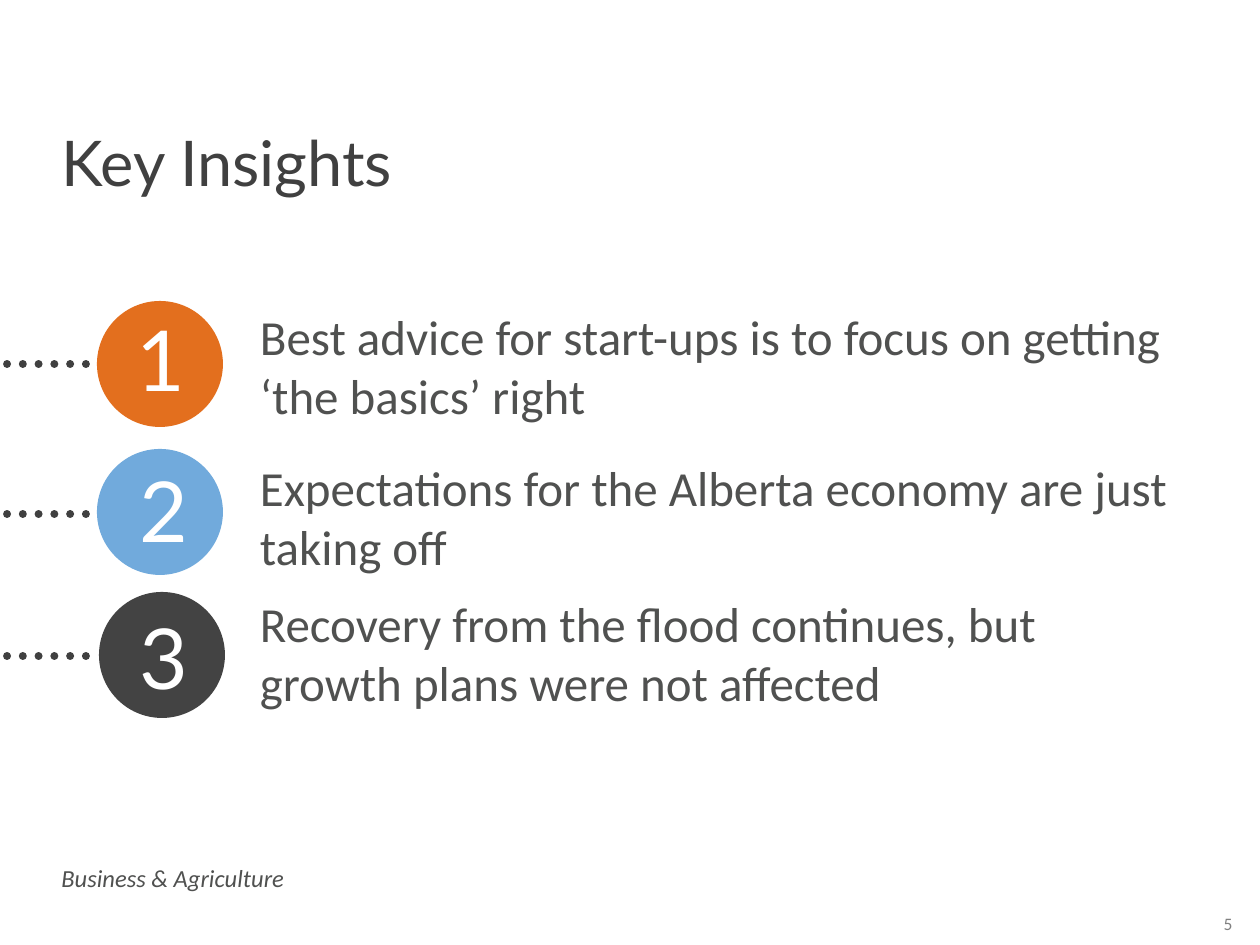
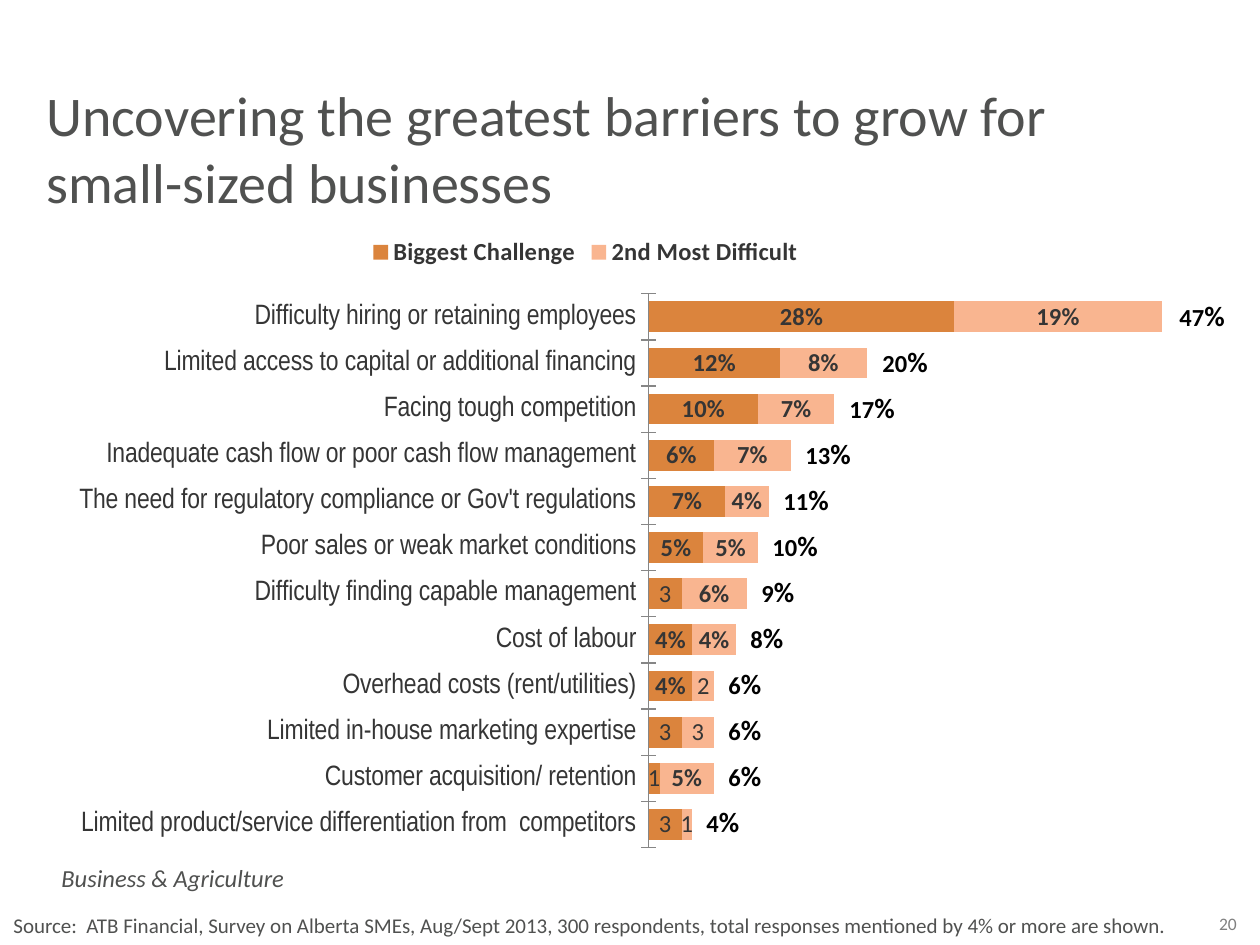
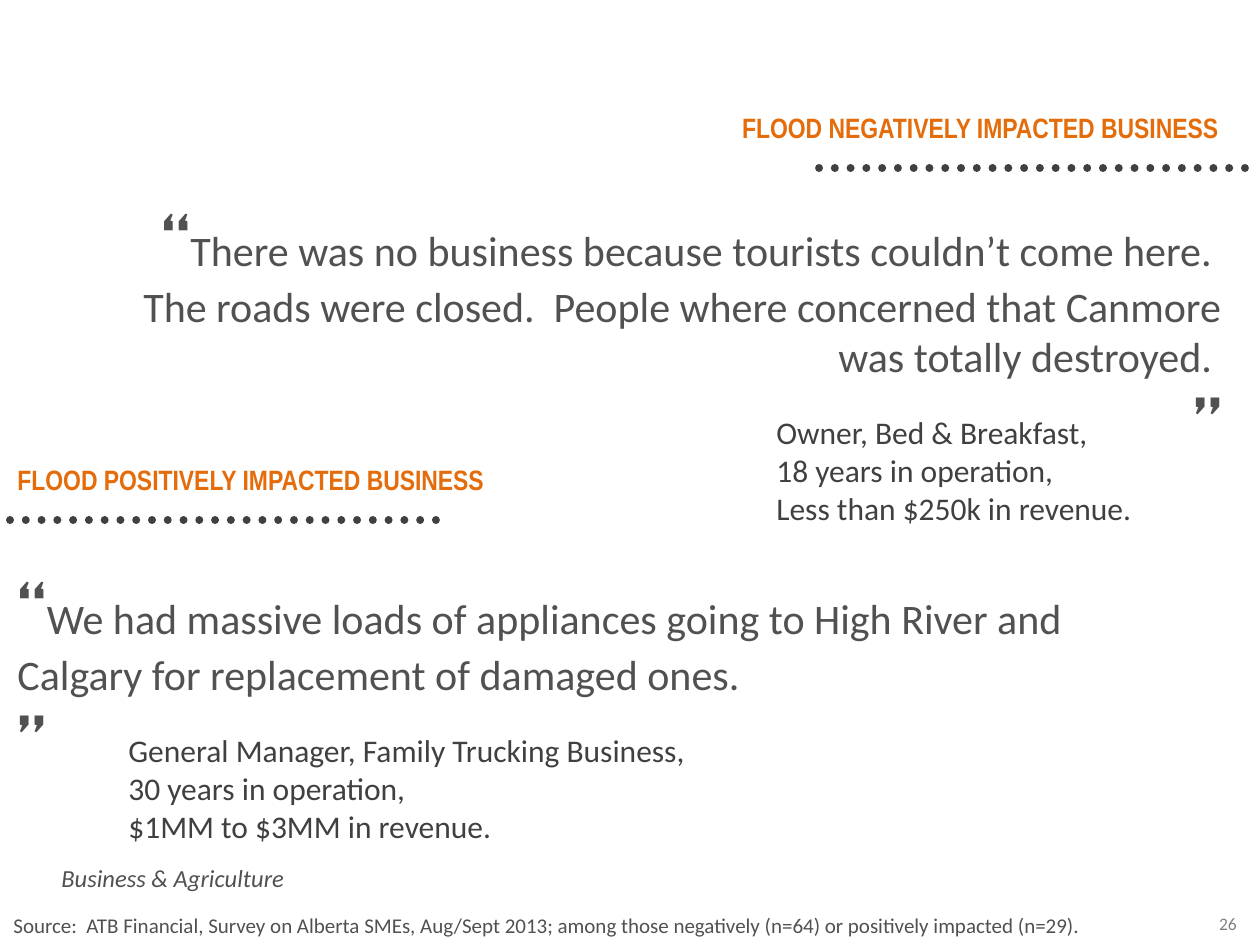
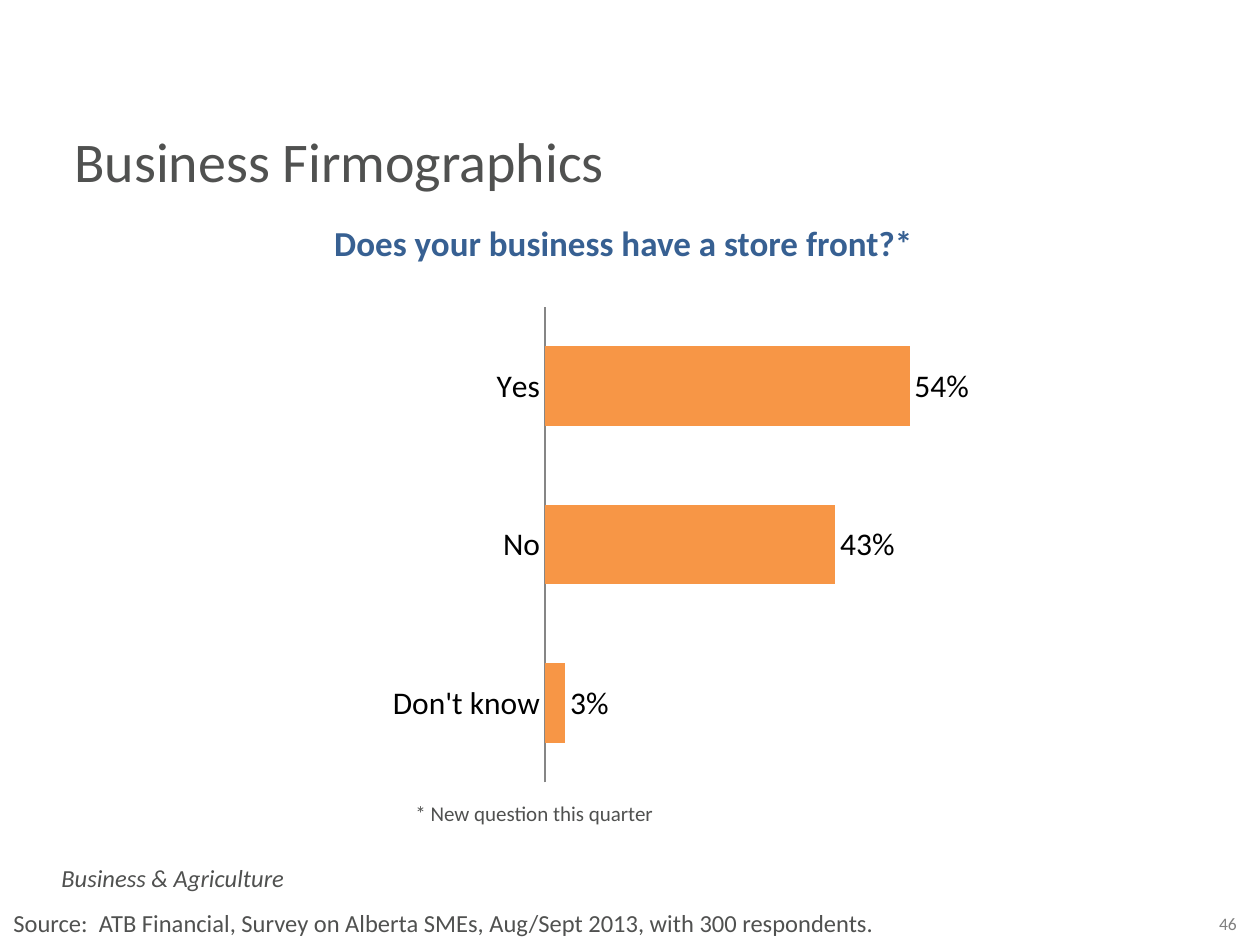
from lxml import etree
from pptx import Presentation
from pptx.chart.data import CategoryChartData
from pptx.dml.color import RGBColor
from pptx.enum.chart import XL_CHART_TYPE as ChartType
from pptx.enum.chart import XL_LABEL_POSITION as LabelPosition
from pptx.enum.chart import XL_LEGEND_POSITION as LegendPosition
from pptx.enum.chart import XL_TICK_MARK as TickMark
from pptx.enum.dml import MSO_LINE_DASH_STYLE as Dash
from pptx.enum.shapes import MSO_CONNECTOR as Connector
from pptx.enum.shapes import MSO_SHAPE as Shape
from pptx.enum.text import MSO_ANCHOR as Anchor
from pptx.enum.text import PP_ALIGN as Align
from pptx.oxml.ns import qn
from pptx.util import Emu, Pt

PX_PER_INCH = 126
BODY, NUMERAL, NARROW, QUOTE = "Calibri", "Lato", "Arial Narrow", "Cabin"
COLORS = {
    "body": "505150", "dark": "404040", "number": "808080", "black": "000000",
    "white": "FFFFFF", "heading": "E46C0A", "question": "376092",
    "orange": "E36F1E", "blue": "71AADC", "charcoal": "434343",
    "chart_text": "353535", "axis": "868686",
    "biggest": "DB843D", "second": "F9B590", "storefront": "F79646",
}

INSIGHTS = [
    # colour, circle (left, top), numeral (left, top), dots top, text top, text
    ("orange", (97, 301), (93, 301), 364, 323,
     "Best advice for start-ups is to focus on getting ‘the basics’ right"),
    ("blue", (97, 449), (96, 452), 514, 474,
     "Expectations for the Alberta economy are just taking off"),
    ("charcoal", (99, 592), (96, 599), 656, 610,
     "Recovery from the flood continues, but growth plans were not affected"),
]

BARRIERS = [
    ("Difficulty hiring or retaining employees", 0.28, 0.19),
    ("Limited access to capital or additional financing", 0.12, 0.08),
    ("Facing tough competition", 0.10, 0.07),
    ("Inadequate cash flow or poor cash flow management", 0.06, 0.07),
    ("The need for regulatory compliance or Gov't regulations", 0.07, 0.04),
    ("Poor sales or weak market conditions", 0.05, 0.05),
    ("Difficulty finding capable management", 0.03, 0.06),
    ("Cost of labour", 0.04, 0.04),
    ("Overhead costs (rent/utilities)", 0.04, 0.02),
    ("Limited in-house marketing expertise", 0.03, 0.03),
    ("Customer acquisition/ retention", 0.01, 0.05),
    ("Limited product/service differentiation from  competitors", 0.03, 0.01),
]
SHORT_LABEL_LIMIT = 0.035


def px(value):
    return Emu(round(value * 914400 / PX_PER_INCH))


def color(name):
    return RGBColor.from_string(COLORS[name])


def style_font(font, size, name=BODY, ink="body", bold=False, italic=False):
    font.size, font.name = Pt(size), name
    font.bold, font.italic = bold, italic
    font.color.rgb = color(ink)


def write_text(frame, paragraphs, align=Align.LEFT, anchor=Anchor.TOP,
               margins=None, line_spacing=None, **style):
    """Fill a frame; a paragraph is a string or a list of (text, style) runs."""
    frame.word_wrap = True
    frame.vertical_anchor = anchor
    if margins:
        (frame.margin_left, frame.margin_top,
         frame.margin_right, frame.margin_bottom) = map(px, margins)
    if isinstance(paragraphs, str):
        paragraphs = [paragraphs]
    for index, runs in enumerate(paragraphs):
        paragraph = frame.add_paragraph() if index else frame.paragraphs[0]
        paragraph.alignment = align
        if line_spacing:
            paragraph.line_spacing = line_spacing
        for text, changes in [(runs, {})] if isinstance(runs, str) else runs:
            run = paragraph.add_run()
            run.text = text
            style_font(run.font, **{**style, **changes})


def add_text(slide, box, paragraphs, **options):
    shape = slide.shapes.add_textbox(*map(px, box))
    write_text(shape.text_frame, paragraphs, **options)


def add_shape(slide, kind, box, fill=None):
    shape = slide.shapes.add_shape(kind, *map(px, box))
    shape.shadow.inherit = False
    shape.line.fill.background()
    if fill:
        shape.fill.solid()
        shape.fill.fore_color.rgb = color(fill)
    else:
        shape.fill.background()
    return shape


def add_dots(slide, left, top, width):
    connector = slide.shapes.add_connector(
        Connector.STRAIGHT, px(left), px(top), px(left + width), px(top))
    connector.line.color.rgb = color("dark")
    connector.line.width = Pt(4.5)
    connector.line.dash_style = Dash.ROUND_DOT
    properties = connector._element.spPr
    properties.find(qn("a:ln")).set("cap", "rnd")
    etree.SubElement(properties, qn("a:effectLst"))


def new_slide(presentation, number):
    """Add a blank slide with the footer all slides share."""
    slide = presentation.slides.add_slide(presentation.slide_layouts[6])
    add_text(slide, (1197, 907, 62, 34), str(number), size=10, ink="number",
             align=Align.CENTER)
    add_text(slide, (49, 857, 354, 43), "Business & Agriculture", size=14,
             italic=True)
    return slide


def add_title(slide, box, text, **options):
    add_text(slide, box, text, **{"size": 32, **options})


def add_source(slide, text, top=906, size=12):
    add_text(slide, (1, top, 1218, 38), "Source:  ATB Financial, Survey on "
             "Alberta SMEs, Aug/Sept 2013" + text, size=size)


def add_bar_chart(slide, box, kind, categories, series, plot_box, gap, maximum,
                  size, ink, bold=False):
    """Add a bar chart; series are (name, values, colour)."""
    data = CategoryChartData(number_format="0%")
    data.categories = categories
    for name, values, _ in series:
        data.add_series(name, values)
    chart = slide.shapes.add_chart(kind, *map(px, box), data).chart
    chart.has_title = chart.has_legend = False
    style_font(chart.font, size, ink=ink, bold=bold)

    chart.value_axis.minimum_scale = 0
    chart.value_axis.maximum_scale = maximum
    chart.value_axis.has_major_gridlines = False
    chart.value_axis.visible = False
    axis = chart.category_axis
    axis.has_major_gridlines = False
    axis.major_tick_mark = axis.minor_tick_mark = TickMark.NONE
    axis.format.line.color.rgb = color("axis")

    plot = chart.plots[0]
    plot.gap_width = gap
    plot.vary_by_categories = False
    for item, (_, _, fill) in zip(plot.series, series):
        item.format.fill.solid()
        item.format.fill.fore_color.rgb = color(fill)
        item.invert_if_negative = False
        labels = item.data_labels
        labels.show_value = True
        labels.number_format, labels.number_format_is_linked = "0%", False
        style_font(labels.font, size, ink=ink, bold=bold)
    place_plot(chart, plot_box)
    return chart


def place_plot(chart, plot_box):
    """Fix the inner plot area, given as fractions of the chart."""
    area = chart._chartSpace.chart.plotArea
    for old in area.findall(qn("c:layout")):
        area.remove(old)
    layout = etree.Element(qn("c:layout"))
    manual = etree.SubElement(layout, qn("c:manualLayout"))
    settings = [("layoutTarget", "inner"), ("xMode", "edge"), ("yMode", "edge"),
                *zip("xywh", plot_box)]
    for tag, value in settings:
        etree.SubElement(manual, qn(f"c:{tag}")).set("val", str(value))
    area.insert(0, layout)


def add_insight(slide, number, fill, circle, numeral, dots_top, text_top, text):
    add_dots(slide, 7, dots_top, 94)
    add_shape(slide, Shape.OVAL, (*circle, 126, 126), fill)
    add_text(slide, (*numeral, 136, 115), str(number), size=48, name=NUMERAL,
             ink="white", align=Align.CENTER)
    add_text(slide, (255, text_top, 921, 79), text, size=28,
             anchor=Anchor.MIDDLE, margins=(5, 5, 5, 0))


def build_insights(presentation):
    slide = new_slide(presentation, 5)
    add_title(slide, (49, 126, 549, 86), "Key Insights", size=36, name=NUMERAL,
              ink="dark", line_spacing=0.9)
    for number, insight in enumerate(INSIGHTS, start=1):
        add_insight(slide, number, *insight)


def shorten_small_labels(series):
    """Drop the percent sign where the bar is too narrow for it."""
    for index, value in enumerate(series.values):
        if value < SHORT_LABEL_LIMIT:
            frame = series.points[index].data_label.text_frame
            run = frame.paragraphs[0].add_run()
            run.text = f"{value * 100:.0f}"
            style_font(run.font, 14, ink="chart_text")


def add_totals(slide, left, top, pitch, px_per_percent):
    for row, (_, biggest, second) in enumerate(BARRIERS):
        total = round((biggest + second) * 100)
        add_text(slide, (left + px_per_percent * total, top + pitch * row, 79, 47),
                 [[(str(total), {}), ("%", {"size": 16})]],
                 size=14, ink="black", bold=True)


def build_barriers(presentation):
    slide = new_slide(presentation, 20)
    add_title(slide, (34, 74, 1118, 149), "Uncovering the greatest barriers to "
              "grow for small-sized businesses")
    names, biggest, second = zip(*reversed(BARRIERS))
    chart = add_bar_chart(
        slide, (-49, 223, 1269, 644), ChartType.BAR_STACKED, names,
        [("Biggest Challenge", biggest, "biggest"),
         ("2nd Most Difficult", second, "second")],
        plot_box=(0.55, 0.11, 0.43, 0.86), gap=50, maximum=0.5,
        size=14, ink="chart_text", bold=True)
    chart.plots[0].overlap = 100
    chart.category_axis.major_tick_mark = TickMark.CROSS
    style_font(chart.category_axis.tick_labels.font, 16, NARROW, "chart_text")
    chart.has_legend = True
    chart.legend.position = LegendPosition.TOP
    chart.legend.include_in_layout = False
    style_font(chart.legend.font, 14, ink="chart_text", bold=True)
    for series in chart.plots[0].series:
        shorten_small_labels(series)
    add_totals(slide, left=650, top=292, pitch=46, px_per_percent=11)
    add_source(slide, ", 300 respondents, total responses mentioned by 4% or "
               "more are shown.")


def add_heading(slide, left, top, text, align):
    callout = add_shape(slide, Shape.ROUNDED_RECTANGULAR_CALLOUT,
                        (left, top, 764, 82))
    for index, value in enumerate((-0.22, 0.49, 0.17)):
        callout.adjustments[index] = value
    write_text(callout.text_frame, text, size=16, name=NARROW, ink="heading",
               bold=True, align=align, anchor=Anchor.MIDDLE)


def add_quote(slide, box, text, align):
    mark = {"size": 40, "name": QUOTE, "bold": True}
    add_text(slide, box, [[("“", mark), (text, {})], [("”", mark)]],
             size=24, align=align)


def build_quotes(presentation):
    slide = new_slide(presentation, 26)
    add_heading(slide, 471, 86, "FLOOD NEGATIVELY IMPACTED BUSINESS", Align.RIGHT)
    add_dots(slide, 819, 168, 431)
    add_quote(slide, (116, 190, 1118, 292),
              "There was no business because tourists couldn’t come here.  The "
              "roads were closed.  People where concerned that Canmore was "
              "totally destroyed. ", Align.RIGHT)
    add_text(slide, (764, 407, 399, 127),
             ["Owner, Bed & Breakfast,", "18 years in operation,",
              "Less than $250k in revenue."], size=18, ink="dark")

    add_heading(slide, 1, 438, "FLOOD POSITIVELY IMPACTED BUSINESS", Align.LEFT)
    add_dots(slide, 10, 520, 431)
    add_quote(slide, (5, 558, 1118, 233),
              "We had massive loads of appliances going to High River and "
              "Calgary for replacement of damaged ones.", Align.LEFT)
    add_text(slide, (116, 725, 648, 127),
             ["General Manager, Family Trucking Business,",
              "30 years in operation,", "$1MM to $3MM in revenue."],
             size=18, ink="dark")
    add_source(slide, "; among those negatively (n=64) or positively impacted "
               "(n=29).")


def build_firmographics(presentation):
    slide = new_slide(presentation, 46)
    add_title(slide, (62, 120, 736, 81), "Business Firmographics")
    add_text(slide, (239, 215, 769, 55), "Does your business have a store front?*",
             size=20, ink="question", bold=True, align=Align.CENTER)
    chart = add_bar_chart(
        slide, (239, 287, 827, 496), ChartType.BAR_CLUSTERED,
        ["Yes", "No", "Don't know"],
        [("Series 1", (0.54, 0.43, 0.03), "storefront")],
        plot_box=(0.37, 0.04, 0.49, 0.96), gap=100, maximum=0.6,
        size=18, ink="black")
    chart.category_axis.reverse_order = True
    chart.plots[0].series[0].data_labels.position = LabelPosition.OUTSIDE_END
    add_text(slide, (403, 794, 307, 38), "* New question this quarter", size=12)
    add_source(slide, ", with 300 respondents.", top=902, size=14)


def main():
    presentation = Presentation()
    presentation.slide_width, presentation.slide_height = px(1260), px(945)
    for build in (build_insights, build_barriers, build_quotes,
                  build_firmographics):
        build(presentation)
    presentation.save("out.pptx")


if __name__ == "__main__":
    main()
